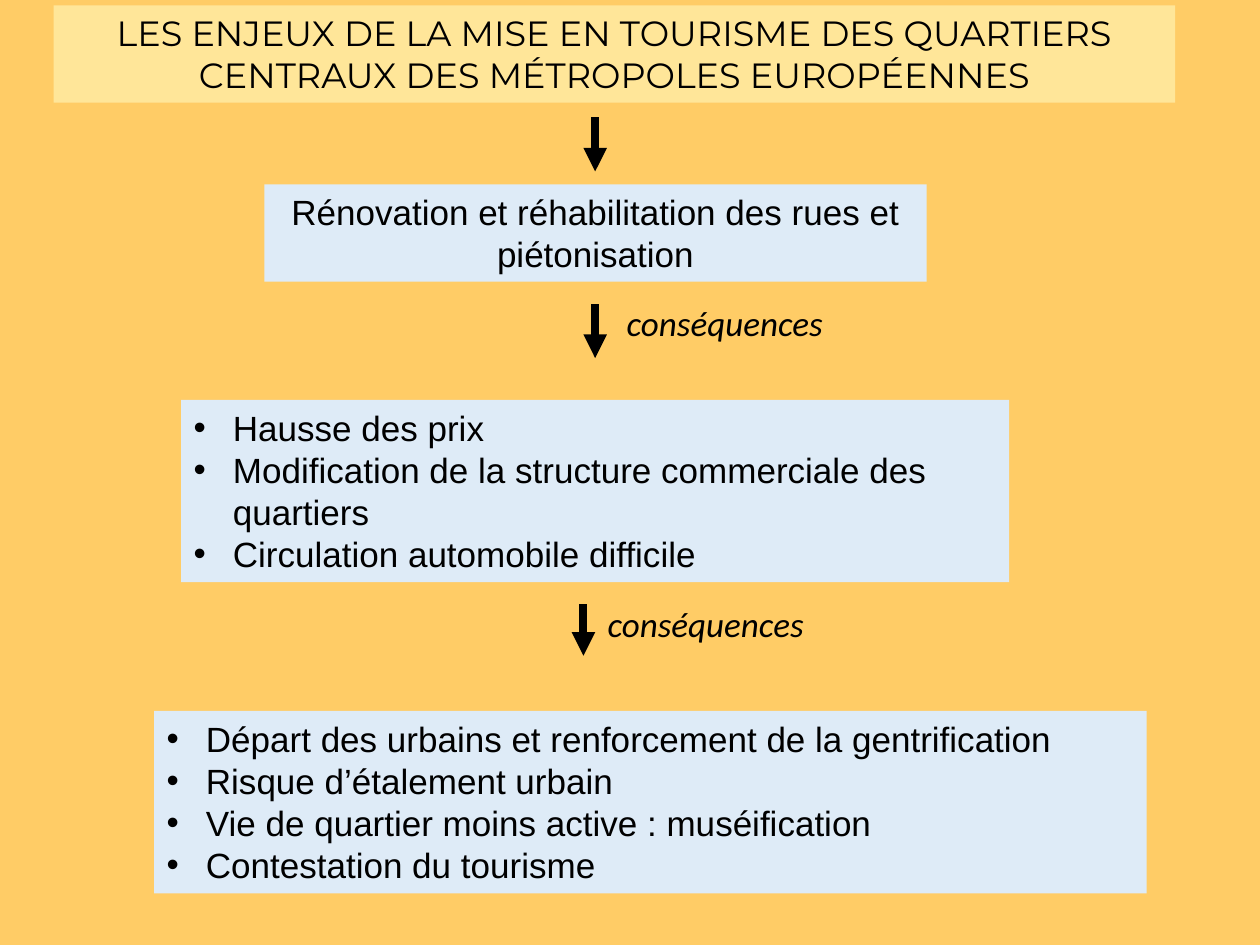
"""Build a flow chart slide on tourism in the central districts of European cities."""
from lxml.etree import SubElement
from pptx import Presentation
from pptx.dml.color import RGBColor
from pptx.enum.shapes import MSO_CONNECTOR, MSO_SHAPE
from pptx.enum.text import MSO_ANCHOR, MSO_AUTO_SIZE, PP_ALIGN
from pptx.oxml.ns import qn
from pptx.util import Pt

HUES = {"page": "FFCC66", "title": "FFE699", "box": "DEEBF7", "ink": "000000"}
FRAME = {"word_wrap": True, "auto_size": MSO_AUTO_SIZE.SHAPE_TO_FIT_TEXT,
         "vertical_anchor": MSO_ANCHOR.TOP}
INDENT = Pt(22.5)


def hue(name):
    return RGBColor.from_string(HUES[name])


def write(shape, lines, face, align=PP_ALIGN.LEFT, bullet=False, italic=False):
    frame = shape.text_frame
    for key, value in FRAME.items():
        setattr(frame, key, value)
    frame.text = "\n".join(lines)
    style = {"name": face, "size": Pt(20), "italic": italic}
    for para in frame.paragraphs:
        para.alignment = align
        font = para.runs[0].font
        for key, value in style.items():
            setattr(font, key, value)
        font.color.rgb = hue("ink")
        if bullet:
            props = para._p.get_or_add_pPr()
            props.set("marL", str(INDENT))
            props.set("indent", str(-INDENT))
            SubElement(props, qn("a:buFont"), typeface="Arial")
            SubElement(props, qn("a:buChar"), char="•")


deck = Presentation()
deck.slide_width, deck.slide_height = Pt(720), Pt(540)
slide = deck.slides.add_slide(deck.slide_layouts[6])
slide.background.fill.solid()
slide.background.fill.fore_color.rgb = hue("page")

boxes = [
    ((30.7, 3, 640.8, 55.7), "title", "Montserrat", False, [
        "LES ENJEUX DE LA MISE EN TOURISME DES QUARTIERS "
        "CENTRAUX DES MÉTROPOLES EUROPÉENNES"]),
    ((151, 105.3, 378.5, 55.7), "box", "Arial", False, [
        "Rénovation et réhabilitation des rues et piétonisation"]),
    ((103.5, 228.5, 473.2, 104.2), "box", "Arial", True, [
        "Hausse des prix",
        "Modification de la structure commerciale des quartiers",
        "Circulation automobile difficile"]),
    ((88.1, 406.3, 567.2, 104.2), "box", "Arial", True, [
        "Départ des urbains et renforcement de la gentrification",
        "Risque d’étalement urbain",
        "Vie de quartier moins active : muséification",
        "Contestation du tourisme"]),
]
for place, fill, face, bullet, lines in boxes:
    box = slide.shapes.add_shape(MSO_SHAPE.RECTANGLE, *map(Pt, place))
    box.shadow.inherit = False
    box.fill.solid()
    box.fill.fore_color.rgb = hue(fill)
    box.line.fill.background()
    align = PP_ALIGN.LEFT if bullet else PP_ALIGN.CENTER
    write(box, lines, face, align, bullet)

for x, top, end in [(340.1, 67, 98), (340.1, 174, 204.6), (333.4, 345.3, 374.7)]:
    arrow = slide.shapes.add_connector(
        MSO_CONNECTOR.STRAIGHT, Pt(x), Pt(top), Pt(x), Pt(end))
    arrow.line.width = Pt(4.5)
    arrow.line.color.rgb = hue("ink")
    SubElement(arrow.line._get_or_add_ln(), qn("a:tailEnd"), type="triangle")
    SubElement(arrow._element.spPr, qn("a:effectLst"))

for left, top in [(351, 168.7), (340.1, 340.6)]:
    label = slide.shapes.add_textbox(Pt(left), Pt(top), Pt(131), Pt(31.5))
    write(label, ["conséquences"], "Calibri", italic=True)

deck.save("out.pptx")
